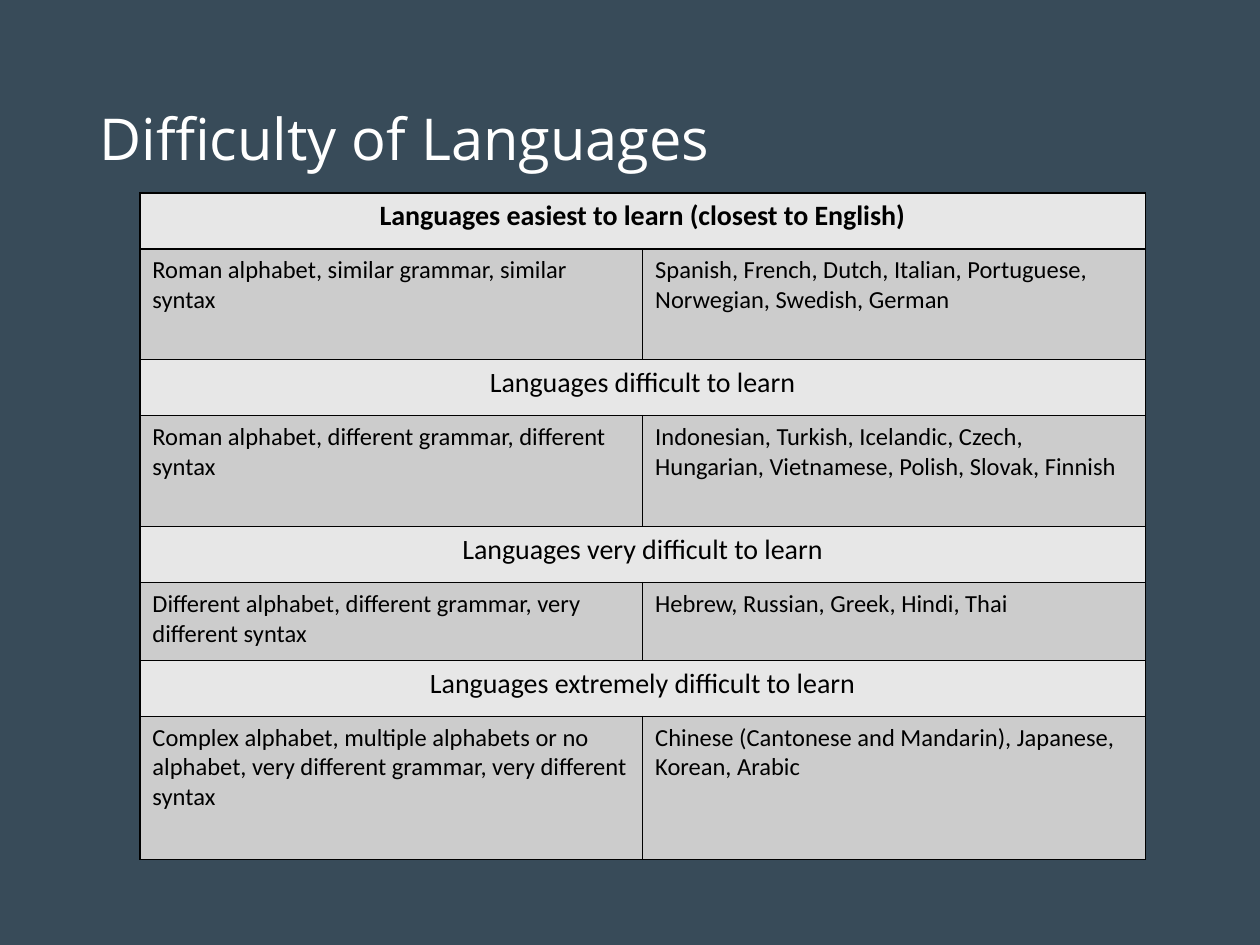
import dataclasses

import lxml.etree
import pptx
import pptx.dml.color
import pptx.enum.text
import pptx.oxml
import pptx.oxml.ns
import pptx.table
import pptx.util

Pt = pptx.util.Pt
Rgb = pptx.dml.color.RGBColor
Align = pptx.enum.text.PP_ALIGN

HUES = {"back": "384B59", "title": "FFFFFF", "text": "000000",
        "line": "000000", "head": "E7E7E7", "cell": "CCCCCC"}


@dataclasses.dataclass
class Level:
    head: str
    traits: str
    tongues: str
    high: float
    bold: bool = False


LEVELS = [
    Level("Languages easiest to learn (closest to English)",
          "Roman alphabet, similar grammar, similar syntax",
          "Spanish, French, Dutch, Italian, Portuguese, Norwegian, Swedish, German",
          63.4, True),
    Level("Languages difficult to learn",
          "Roman alphabet, different grammar, different syntax",
          "Indonesian, Turkish, Icelandic, Czech, Hungarian, Vietnamese, "
          "Polish, Slovak, Finnish", 63.4),
    Level("Languages very difficult to learn",
          "Different alphabet, different grammar, very different syntax",
          "Hebrew, Russian, Greek, Hindi, Thai", 44.6),
    Level("Languages extremely difficult to learn",
          "Complex alphabet, multiple alphabets or no alphabet, "
          "very different grammar, very different syntax",
          "Chinese (Cantonese and Mandarin), Japanese, Korean, Arabic", 81.6),
]
HEAD = 32
WIDE = 574.6


def apply(item: object, form: dict) -> None:
    for name, value in form.items():
        setattr(item, name, value)


def style(para, form: dict, hue: str, align: Align) -> None:
    para.alignment = align
    apply(para.font, form)
    para.font.color.rgb = Rgb.from_string(HUES[hue])


def edge(cell: pptx.table._Cell) -> None:
    props = cell._tc.get_or_add_tcPr()
    for side in ("lnL", "lnR", "lnT", "lnB"):
        line = lxml.etree.SubElement(props, pptx.oxml.ns.qn("a:" + side), w=str(Pt(1)))
        fill = lxml.etree.SubElement(line, pptx.oxml.ns.qn("a:solidFill"))
        lxml.etree.SubElement(fill, pptx.oxml.ns.qn("a:srgbClr"), val=HUES["line"])


def paint(cell: pptx.table._Cell, hue: str) -> None:
    edge(cell)
    cell.fill.solid()
    cell.fill.fore_color.rgb = Rgb.from_string(HUES[hue])


def write(cell: pptx.table._Cell, text: str, size: float, bold: bool, align: Align) -> None:
    cell.text = text
    form = {"name": "Calibri", "size": Pt(size), "bold": bold}
    style(cell.text_frame.paragraphs[0], form, "text", align)


def main() -> None:
    deck = pptx.Presentation()
    apply(deck, {"slide_width": Pt(720), "slide_height": Pt(540)})
    slide = deck.slides.add_slide(deck.slide_layouts[5])
    slide.background.fill.solid()
    slide.background.fill.fore_color.rgb = Rgb.from_string(HUES["back"])

    # Title
    title = slide.shapes.title
    apply(title, {"left": Pt(49.7), "top": Pt(28.8),
                  "width": Pt(620.6), "height": Pt(104.4)})
    title.text = "Difficulty of Languages"
    apply(title.text_frame, {"auto_size": pptx.enum.text.MSO_AUTO_SIZE.NONE,
                             "vertical_anchor": pptx.enum.text.MSO_ANCHOR.MIDDLE})
    para = title.text_frame.paragraphs[0]
    para.line_spacing = 0.9
    style(para, {"name": "Open Sans", "size": Pt(33)}, "title", Align.LEFT)

    # Table: a heading row and a detail row for each level
    total = sum(HEAD + level.high for level in LEVELS)
    frame = slide.shapes.add_table(2 * len(LEVELS), 2, Pt(79.9), Pt(110.2),
                                   Pt(WIDE), Pt(total))
    table = frame.table
    apply(table, {"first_row": False, "horz_banding": False})
    for col in table.columns:
        col.width = Pt(WIDE / 2)
    for num, level in enumerate(LEVELS):
        top, low = 2 * num, 2 * num + 1
        table.rows[top].height = Pt(HEAD)
        table.rows[low].height = Pt(level.high)
        for col in range(2):
            paint(table.cell(top, col), "head")
            paint(table.cell(low, col), "cell")
        table.cell(top, 0).merge(table.cell(top, 1))
        write(table.cell(top, 0), level.head, 16, level.bold, Align.CENTER)
        for col, text in enumerate((level.traits, level.tongues)):
            write(table.cell(low, col), text, 14, False, Align.LEFT)

    deck.save("out.pptx")


if __name__ == "__main__":
    main()
